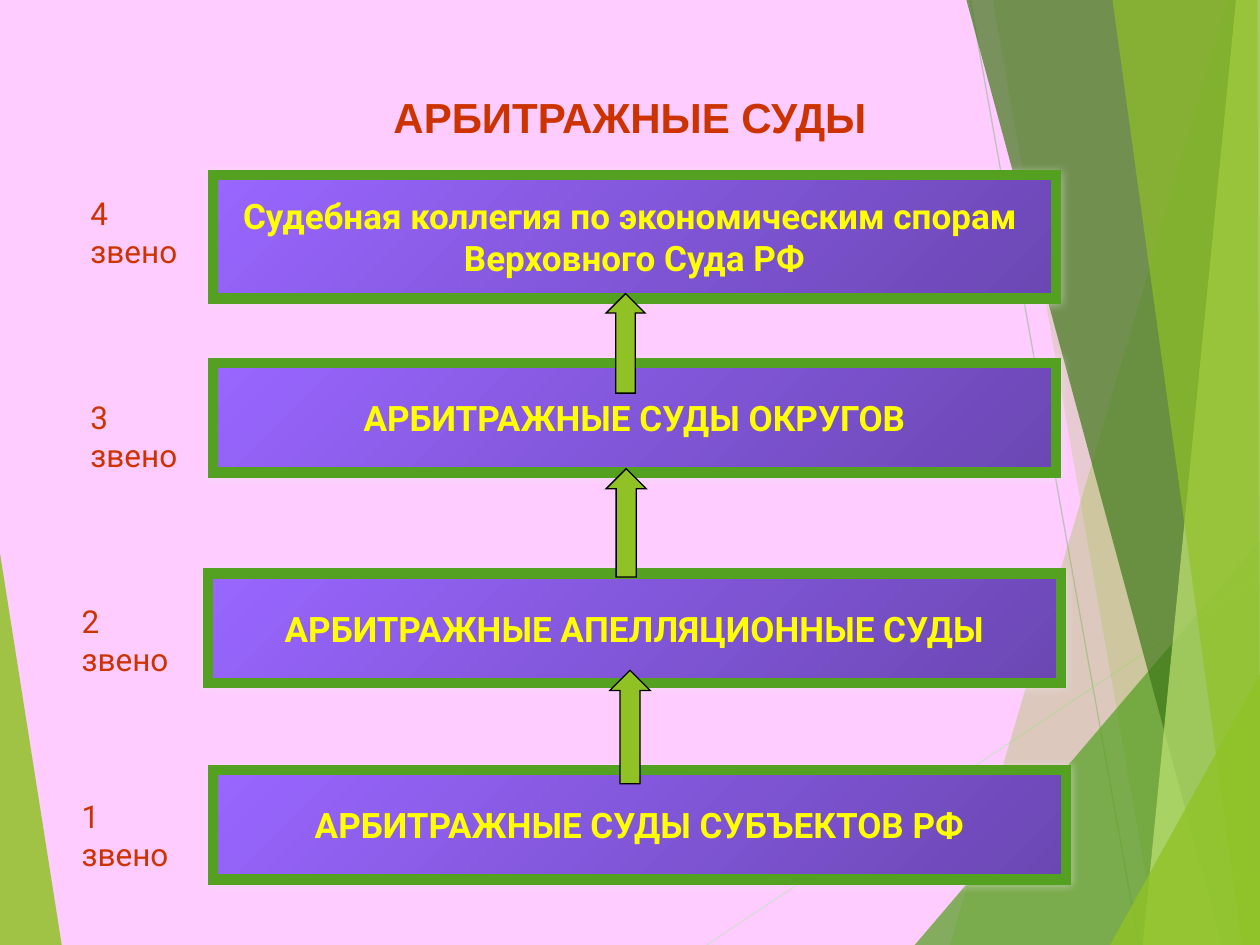
from typing import NamedTuple

from lxml import etree
from pptx import Presentation
from pptx.dml.color import RGBColor
from pptx.enum.shapes import MSO_CONNECTOR, MSO_SHAPE
from pptx.enum.text import MSO_ANCHOR, PP_ALIGN
from pptx.oxml import parse_xml
from pptx.oxml.ns import qn
from pptx.util import Inches, Pt

RECTANGLE = MSO_SHAPE.RECTANGLE
UP_ARROW = MSO_SHAPE.UP_ARROW
STRAIGHT = MSO_CONNECTOR.STRAIGHT
CENTER, LEFT = PP_ALIGN.CENTER, PP_ALIGN.LEFT
MIDDLE, TOP = MSO_ANCHOR.MIDDLE, MSO_ANCHOR.TOP

PINK = RGBColor(0xFF, 0xCC, 0xFF)
LIME = RGBColor(0x90, 0xC2, 0x26)
PALE_LIME = RGBColor(0xC0, 0xE4, 0x74)
GREEN = RGBColor(0x54, 0xA0, 0x21)
DARK_GREEN = RGBColor(0x3F, 0x78, 0x19)
GRAY = RGBColor(0xBF, 0xBF, 0xBF)
LIGHT_GRAY = RGBColor(0xD9, 0xD9, 0xD9)
DARK_PURPLE = RGBColor(0x6B, 0x47, 0xB3)
PURPLE = RGBColor(0x99, 0x66, 0xFF)
YELLOW = RGBColor(0xFF, 0xFF, 0x00)
RED = RGBColor(0xCC, 0x33, 0x00)
BLACK = RGBColor(0, 0, 0)

TITLE_FONT = {"name": "Arial", "size": Pt(24), "bold": True}
COURT_FONT = {"name": "Roboto", "size": Pt(20), "bold": True}
LEVEL_FONT = {"name": "Roboto", "size": Pt(18), "bold": False}

SHADOW_XML = (
    '<a:effectLst xmlns:a="http://schemas.openxmlformats.org/drawingml/2006/main">'
    '<a:outerShdw blurRad="63500" dist="0" dir="0" algn="ctr" rotWithShape="0">'
    '<a:srgbClr val="EBEBEB"><a:alpha val="50000"/></a:srgbClr>'
    "</a:outerShdw></a:effectLst>"
)


class Box(NamedTuple):
    left: float
    top: float
    width: float
    height: float

    def lengths(self) -> list:
        return [Inches(value) for value in self]


class Facet(NamedTuple):
    points: list
    color: RGBColor
    opacity: int


class Ray(NamedTuple):
    start: tuple
    end: tuple
    color: RGBColor


class Court(NamedTuple):
    lines: list
    box: Box
    level: str
    level_left: float
    level_top: float


LEFT_FACET = Facet([(0, 4.39), (0.49, 7.5), (0, 7.5)], LIME, 85)
RAYS = [
    Ray((5.61, 7.5), (10, 4.57), LIGHT_GRAY),
    Ray((7.7, 0), (9.04, 7.5), GRAY),
]
RIGHT_FACETS = [
    Facet([(9.75, 0), (7.54, 7.5), (10, 7.5), (10, 0)], LIME, 30),
    Facet([(7.88, 0), (9.19, 7.5), (10, 7.5), (10, 0)], LIME, 20),
    Facet([(7.26, 7.5), (10, 4.29), (10, 7.5)], GREEN, 72),
    Facet([(7.67, 0), (9.7, 7.5), (10, 7.5), (10, 0)], DARK_GREEN, 70),
    Facet([(9.81, 0), (9.07, 7.5), (10, 7.5), (10, 0)], PALE_LIME, 70),
    Facet([(8.83, 0), (9.86, 7.5), (10, 7.5), (9.98, 0)], LIME, 65),
    Facet([(8.81, 7.5), (10, 5.35), (10, 7.5)], LIME, 80),
]
COURTS = [
    Court(["Судебная коллегия по экономическим спорам ", "Верховного Суда РФ"],
          Box(1.69, 1.39, 6.69, 0.98), "4 звено", 0.62, 1.49),
    Court(["АРБИТРАЖНЫЕ СУДЫ ОКРУГОВ"],
          Box(1.69, 2.88, 6.69, 0.87), "3 звено", 0.62, 3.11),
    Court(["АРБИТРАЖНЫЕ АПЕЛЛЯЦИОННЫЕ СУДЫ"],
          Box(1.65, 4.55, 6.77, 0.87), "2 звено", 0.55, 4.73),
    Court(["АРБИТРАЖНЫЕ СУДЫ СУБЪЕКТОВ РФ"],
          Box(1.69, 6.11, 6.77, 0.87), "1 звено", 0.55, 6.28),
]
ARROWS = [
    Box(4.81, 2.33, 0.31, 0.79),
    Box(4.81, 3.72, 0.32, 0.86),
    Box(4.84, 5.32, 0.32, 0.9),
]


def write_text(shape, lines: list, font: dict, color: RGBColor, align, anchor) -> None:
    frame = shape.text_frame
    frame.word_wrap = True
    frame.vertical_anchor = anchor
    frame.text = "\n".join(lines)
    for paragraph in frame.paragraphs:
        paragraph.alignment = align
        for name, value in font.items():
            setattr(paragraph.font, name, value)
        paragraph.font.color.rgb = color


def outline(shape, color: RGBColor, width: float) -> None:
    """Give the shape a line with sharp corners."""
    shape.line.color.rgb = color
    shape.line.width = Pt(width)
    line = shape._element.spPr.find(qn("a:ln"))
    etree.SubElement(line, qn("a:miter"), lim="800000")


def draw_facet(slide, facet: Facet) -> None:
    points = [(Inches(x), Inches(y)) for x, y in facet.points]
    builder = slide.shapes.build_freeform(*points[0])
    builder.add_line_segments(points[1:], close=True)
    shape = builder.convert_to_shape()
    shape.shadow.inherit = False
    shape.fill.solid()
    shape.fill.fore_color.rgb = facet.color
    shape.line.fill.background()
    color = shape._element.spPr.find(qn("a:solidFill"))[0]
    etree.SubElement(color, qn("a:alpha"), val=str(facet.opacity * 1000))


def draw_ray(slide, ray: Ray) -> None:
    ends = [Inches(value) for value in ray.start + ray.end]
    connector = slide.shapes.add_connector(STRAIGHT, *ends)
    connector.line.color.rgb = ray.color
    connector.line.width = Pt(0.75)
    etree.SubElement(connector._element.spPr, qn("a:effectLst"))


def draw_text_box(slide, box: Box, text: str, font: dict, align, anchor) -> None:
    shape = slide.shapes.add_textbox(*box.lengths())
    write_text(shape, [text], font, RED, align, anchor)


def draw_court(slide, court: Court) -> None:
    shape = slide.shapes.add_shape(RECTANGLE, *court.box.lengths())
    shape.fill.gradient()
    shape.fill.gradient_angle = 135
    for stop, color in zip(shape.fill.gradient_stops, (DARK_PURPLE, PURPLE)):
        stop.color.rgb = color
    outline(shape, GREEN, 6)
    shape._element.spPr.append(parse_xml(SHADOW_XML))
    write_text(shape, court.lines, COURT_FONT, YELLOW, CENTER, MIDDLE)


def draw_arrow(slide, box: Box) -> None:
    shape = slide.shapes.add_shape(UP_ARROW, *box.lengths())
    shape.shadow.inherit = False
    shape.fill.solid()
    shape.fill.fore_color.rgb = LIME
    outline(shape, BLACK, 0.75)


def main() -> None:
    presentation = Presentation()
    presentation.slide_width = Inches(10)
    presentation.slide_height = Inches(7.5)
    slide = presentation.slides.add_slide(presentation.slide_layouts[6])
    slide.background.fill.solid()
    slide.background.fill.fore_color.rgb = PINK

    # Backdrop of translucent facets and thin rays
    draw_facet(slide, LEFT_FACET)
    for ray in RAYS:
        draw_ray(slide, ray)
    for facet in RIGHT_FACETS:
        draw_facet(slide, facet)

    # Title
    draw_text_box(slide, Box(0.5, 0.3, 9, 1.25), "АРБИТРАЖНЫЕ СУДЫ",
                  TITLE_FONT, CENTER, MIDDLE)

    # Courts with their levels, highest first
    for court in COURTS:
        draw_court(slide, court)
    for court in COURTS:
        draw_text_box(slide, Box(court.level_left, court.level_top, 1.07, 0.4),
                      court.level, LEVEL_FONT, LEFT, TOP)

    # Arrows from each court to the one above
    for arrow in ARROWS:
        draw_arrow(slide, arrow)

    presentation.save("out.pptx")


if __name__ == "__main__":
    main()
